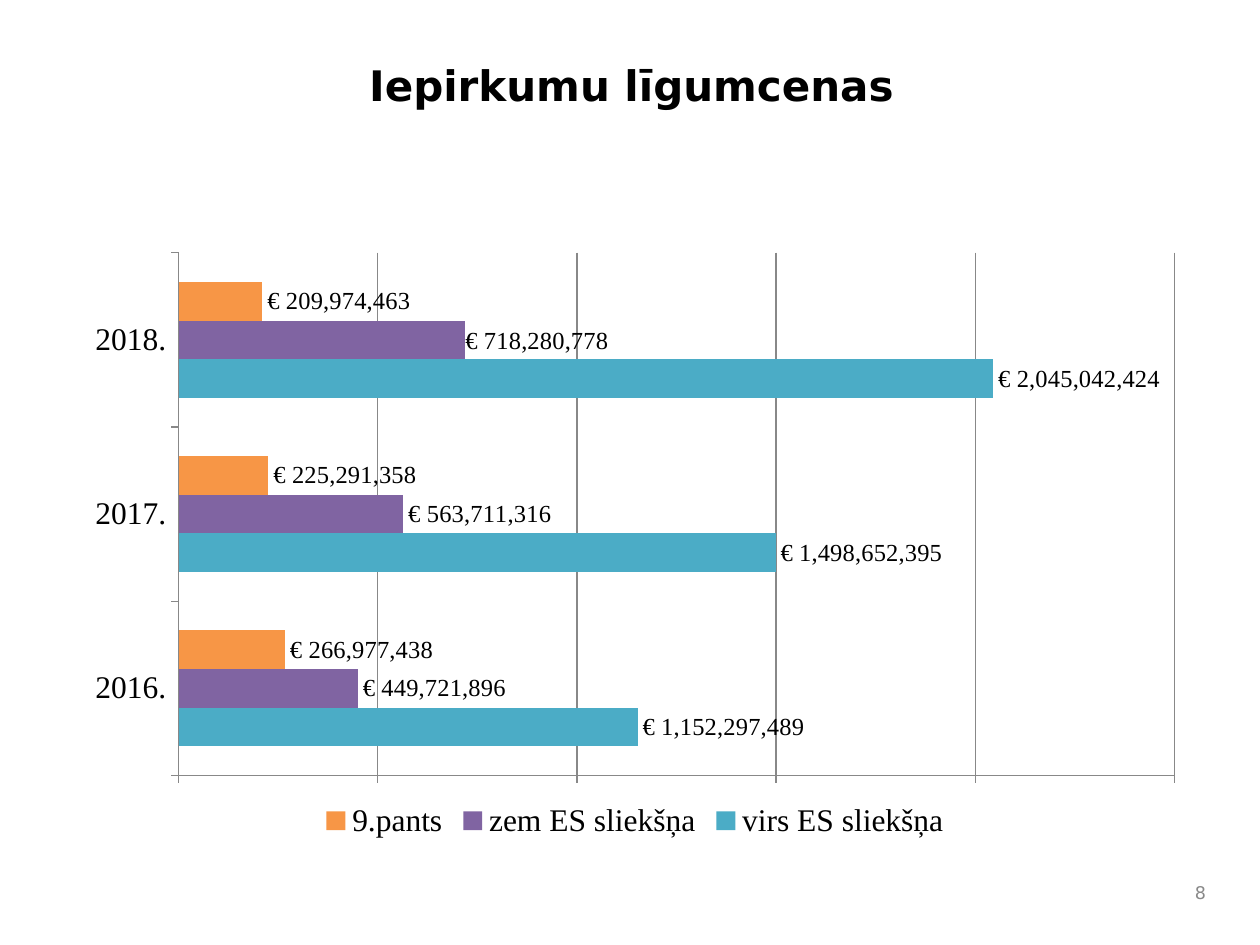
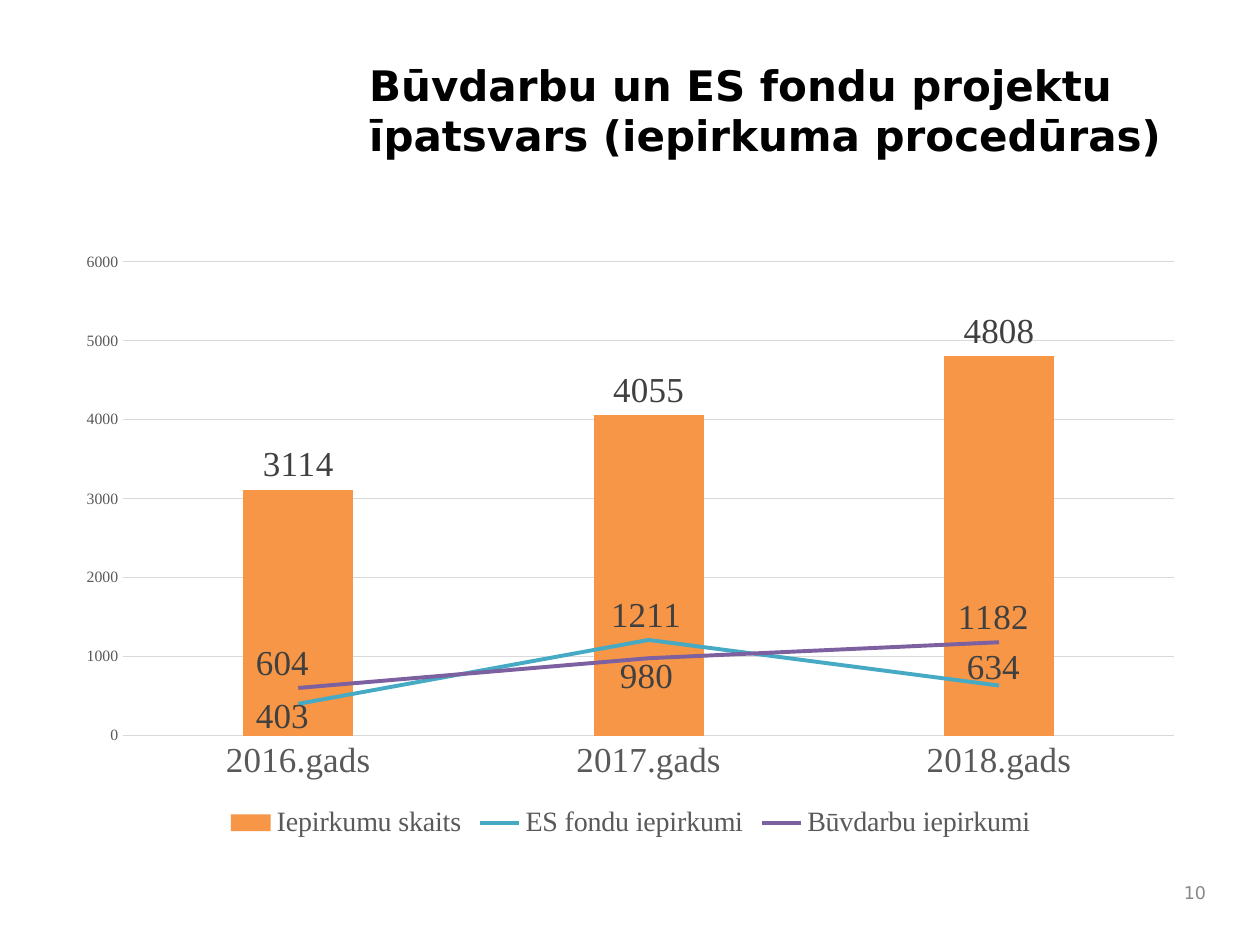
from lxml import etree
from pptx import Presentation
from pptx.chart.data import CategoryChartData
from pptx.dml.color import RGBColor
from pptx.enum.chart import (XL_CHART_TYPE, XL_LABEL_POSITION, XL_LEGEND_POSITION,
                             XL_MARKER_STYLE, XL_TICK_LABEL_POSITION, XL_TICK_MARK)
from pptx.enum.text import MSO_ANCHOR, MSO_AUTO_SIZE, PP_ALIGN
from pptx.oxml import parse_xml
from pptx.oxml.ns import qn
from pptx.util import Inches, Pt

COLORS = {
    "black": "000000", "page": "898989", "axis": "888888", "grid": "D9D9D9",
    "axis_text": "595959", "label_text": "404040",
    "orange": "F79646", "purple": "8064A2", "teal": "4BACC6",
    "purple_line": "7D60A0", "teal_line": "46AAC5",
}
CHART_NS = "http://schemas.openxmlformats.org/drawingml/2006/chart"
EURO = r"[$€-2]\ #,##0"
ABOVE, BELOW = XL_LABEL_POSITION.ABOVE, XL_LABEL_POSITION.BELOW
OUTSIDE = XL_LABEL_POSITION.OUTSIDE_END


def rgb(name):
    return RGBColor.from_string(COLORS[name])


def manual_layout(**settings):
    layout = etree.Element(qn("c:layout"), nsmap={"c": CHART_NS})
    manual = etree.SubElement(layout, qn("c:manualLayout"))
    for key, value in settings.items():
        etree.SubElement(manual, qn(f"c:{key}")).set("val", str(value))
    return parse_xml(etree.tostring(layout))


class Deck:
    """Holds the shared style and the slide being built."""

    heading_font = "DejaVu Sans"
    chart_font = "Times New Roman"

    def __init__(self):
        self.presentation = Presentation()
        self.presentation.slide_width = Inches(10)
        self.presentation.slide_height = Inches(7.5)
        self.slide = None

    def style(self, font, size, color, name=chart_font, bold=False):
        font.name, font.size, font.bold = name, Pt(size), bold
        font.color.rgb = rgb(color)

    def add_slide(self, heading, page):
        layout = self.presentation.slide_layouts[5]
        self.slide = self.presentation.slides.add_slide(layout)
        title = self.slide.shapes.title
        title.left, title.top = Inches(2.83), Inches(0.42)
        title.width, title.height = Inches(6.67), Inches(1.13)
        self.fill_text(title, heading, 24, "black", PP_ALIGN.LEFT, MSO_ANCHOR.TOP, True)
        number = self.slide.shapes.add_textbox(
            Inches(9.21), Inches(6.92), Inches(0.46), Inches(0.33))
        self.fill_text(number, page, 10, "page", PP_ALIGN.RIGHT, MSO_ANCHOR.MIDDLE)

    def fill_text(self, box, text, size, color, align, anchor, bold=False):
        frame = box.text_frame
        frame.text = text
        frame.word_wrap = True
        frame.auto_size = MSO_AUTO_SIZE.NONE
        frame.vertical_anchor = anchor
        paragraph = frame.paragraphs[0]
        paragraph.alignment = align
        self.style(paragraph.font, size, color, self.heading_font, bold)

    def add_chart(self, kind, left, width, categories, series, plot_box,
                  gap, legend_size, text_color):
        data = CategoryChartData()
        data.categories = categories
        for name, values in series.items():
            data.add_series(name, values)
        chart = self.slide.shapes.add_chart(
            kind, Inches(left), Inches(1.92), Inches(width), Inches(4.78), data).chart
        self.style(chart.font, legend_size, text_color)
        chart.has_title = False
        chart.has_legend = True
        chart.legend.position = XL_LEGEND_POSITION.BOTTOM
        chart.legend.include_in_layout = False
        self.style(chart.legend.font, legend_size, text_color)
        bars = chart.plots[0]
        bars.gap_width, bars.overlap = gap, 0
        bars.vary_by_categories = False
        area = chart._chartSpace.chart.plotArea
        for old_layout in area.findall(qn("c:layout")):
            area.remove(old_layout)
        x, y, w, h = plot_box
        area.insert(0, manual_layout(layoutTarget="inner", xMode="edge", yMode="edge",
                                     x=x, y=y, w=w, h=h))
        return chart

    def format_axis(self, axis, size, text_color, line, tick):
        axis.major_tick_mark, axis.minor_tick_mark = tick, XL_TICK_MARK.NONE
        self.style(axis.tick_labels.font, size, text_color)
        if line:
            axis.format.line.color.rgb = rgb(line)
            axis.format.line.width = Pt(0.75)
        else:
            axis.format.line.fill.background()

    def format_scale(self, axis, maximum, step, grid):
        axis.minimum_scale, axis.maximum_scale, axis.major_unit = 0, maximum, step
        axis.has_major_gridlines = True
        axis.major_gridlines.format.line.color.rgb = rgb(grid)
        axis.major_gridlines.format.line.width = Pt(0.75)

    def format_bars(self, series, color):
        series.invert_if_negative = False
        series.format.fill.solid()
        series.format.fill.fore_color.rgb = rgb(color)

    def format_line(self, series, color):
        series.smooth = False
        series.marker.style = XL_MARKER_STYLE.NONE
        series.format.line.color.rgb = rgb(color)
        series.format.line.width = Pt(2.25)

    def label_series(self, series, size, color, number_format="General", position=None):
        labels = series.data_labels
        labels.show_value = True
        labels.number_format = number_format
        labels.number_format_is_linked = False
        if position is not None:
            labels.position = position
        self.style(labels.font, size, color)

    def move_label(self, series, index, size, color, position, dx, dy,
                   number_format="General"):
        label = series.points[index].data_label
        self.style(label.font, size, color)
        label.position = position
        idx = series._element.xpath(f"c:dLbls/c:dLbl/c:idx[@val='{index}']")[0]
        layout = manual_layout(x=dx, y=dy)
        idx.addnext(layout)
        code = etree.Element(qn("c:numFmt"), formatCode=number_format, sourceLinked="0")
        layout.addnext(code)

    def turn_into_lines(self, chart, first):
        bar_plot = chart._chartSpace.chart.plotArea.find(qn("c:barChart"))
        line_plot = parse_xml(
            f'<c:lineChart xmlns:c="{CHART_NS}"><c:grouping val="standard"/>'
            '<c:varyColors val="0"/></c:lineChart>')
        for element in bar_plot.findall(qn("c:ser"))[first:]:
            for invert in element.findall(qn("c:invertIfNegative")):
                element.remove(invert)
            line_plot.append(element)
        etree.SubElement(line_plot, qn("c:marker")).set("val", "1")
        for axis_id in bar_plot.findall(qn("c:axId")):
            etree.SubElement(line_plot, qn("c:axId")).set("val", axis_id.get("val"))
        bar_plot.addnext(line_plot)


def build_contract_prices(deck):
    deck.add_slide("Iepirkumu līgumcenas", "8")
    prices = {
        "virs ES sliekšņa": (1152297489, 1498652395, 2045042424),
        "zem ES sliekšņa": (449721896, 563711316, 718280778),
        "9.pants": (266977438, 225291358, 209974463),
    }
    chart = deck.add_chart(
        XL_CHART_TYPE.BAR_CLUSTERED, 0.58, 8.92, ("2016.", "2017.", "2018."), prices,
        (0.094, 0.018, 0.886, 0.868), 150, 18, "black")
    for axis in (chart.category_axis, chart.value_axis):
        deck.format_axis(axis, 18, "black", "axis", XL_TICK_MARK.OUTSIDE)
    deck.format_scale(chart.value_axis, 2500000000, 500000000, "axis")
    chart.value_axis.tick_label_position = XL_TICK_LABEL_POSITION.NONE
    for series, color in zip(chart.plots[0].series, ("teal", "purple", "orange")):
        deck.format_bars(series, color)
        deck.label_series(series, 14, "black", EURO, OUTSIDE)
    below_threshold = chart.plots[0].series[1]
    deck.move_label(below_threshold, 2, 14, "black", OUTSIDE, -0.004, 0.002, EURO)


def build_procurement_share(deck):
    deck.add_slide("Būvdarbu un ES fondu projektu īpatsvars (iepirkuma procedūras)", "10")
    counts = {
        "Iepirkumu skaits": (3114, 4055, 4808),
        "ES fondu iepirkumi": (403, 1211, 634),
        "Būvdarbu iepirkumi": (604, 980, 1182),
    }
    chart = deck.add_chart(
        XL_CHART_TYPE.COLUMN_CLUSTERED, 0.51, 8.99,
        ("2016.gads", "2017.gads", "2018.gads"), counts,
        (0.052, 0.033, 0.928, 0.787), 219, 16, "axis_text")
    deck.format_axis(chart.category_axis, 20, "axis_text", "grid", XL_TICK_MARK.NONE)
    deck.format_axis(chart.value_axis, 9, "axis_text", None, XL_TICK_MARK.NONE)
    deck.format_scale(chart.value_axis, 6000, 1000, "grid")
    deck.turn_into_lines(chart, 1)
    bars, lines = chart.plots
    deck.format_bars(bars.series[0], "orange")
    deck.label_series(bars.series[0], 20, "label_text", position=OUTSIDE)
    label_places = (
        ((BELOW, -0.014, -0.02), (ABOVE, -0.002, 0), (ABOVE, -0.005, 0.012)),
        ((ABOVE, -0.014, 0), (BELOW, -0.002, -0.01), (ABOVE, -0.005, 0)),
    )
    for series, color, places in zip(lines.series, ("teal_line", "purple_line"), label_places):
        deck.format_line(series, color)
        deck.label_series(series, 20, "label_text")
        for index, place in enumerate(places):
            deck.move_label(series, index, 20, "label_text", *place)


def main():
    deck = Deck()
    build_contract_prices(deck)
    build_procurement_share(deck)
    deck.presentation.save("out.pptx")


if __name__ == "__main__":
    main()
